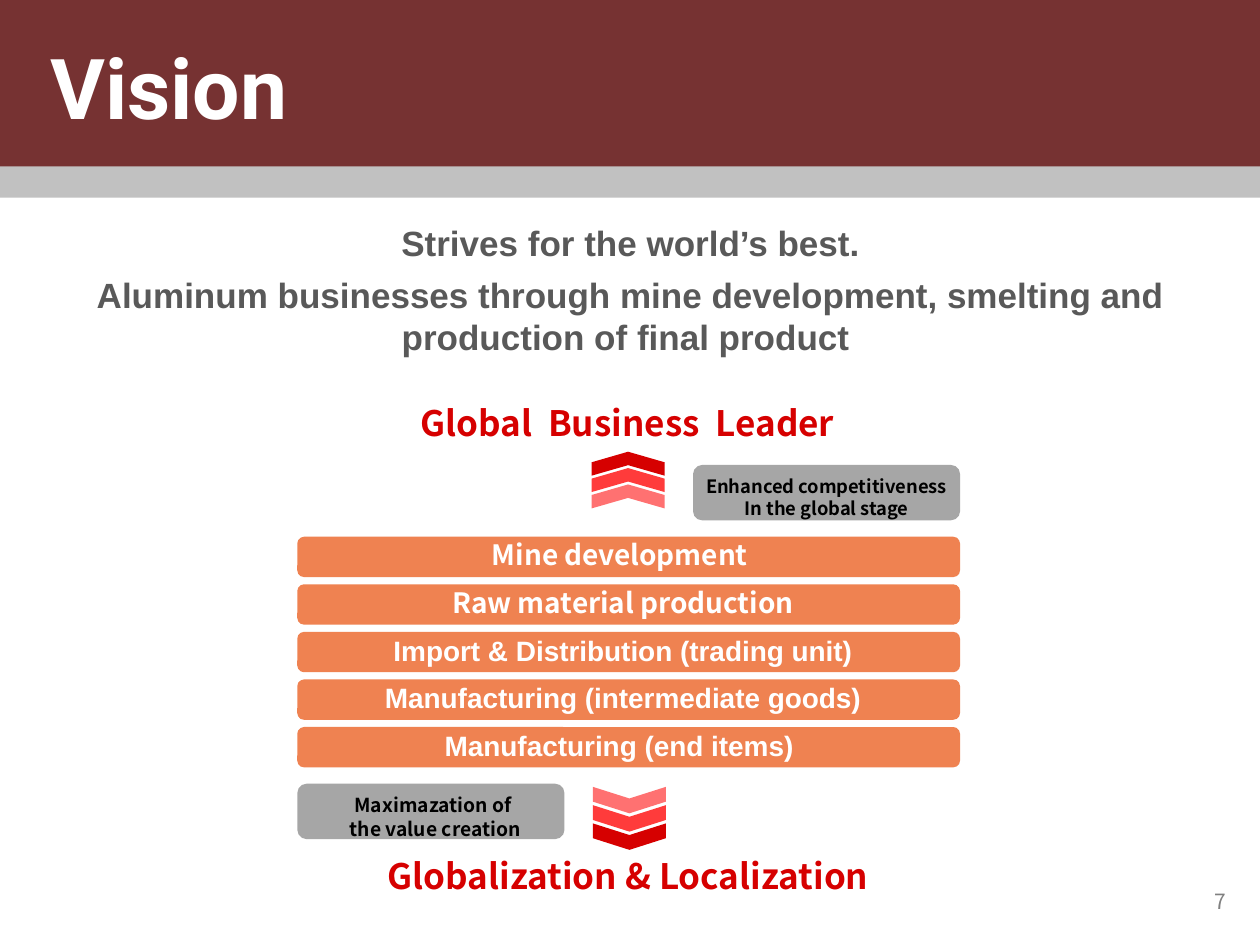
from dataclasses import dataclass
from pptx import Presentation
from pptx.dml.color import RGBColor
from pptx.enum.shapes import MSO_SHAPE
from pptx.enum.text import MSO_ANCHOR, MSO_AUTO_SIZE, PP_ALIGN
from pptx.util import Inches, Pt


@dataclass(frozen=True)
class Theme:
    maroon: str = "763232"
    silver: str = "C1C1C1"
    gray: str = "A6A6A6"
    orange: str = "EF8251"
    white: str = "FFFFFF"
    black: str = "000000"
    text: str = "595959"
    number: str = "808080"
    reds: tuple = ("D60000", "FF3B3B", "FF7171")
    title_font: str = "Roboto"
    body_font: str = "Arial"
    label_font: str = "Noto Sans CJK KR"
    title_size: float = 48
    heading_size: float = 20
    bar_size: float = 16
    number_size: float = 12


THEME = Theme()


def add_block(s, kind, box, color, rotation=0):
    sp = s.shapes.add_shape(kind, *map(Inches, box))
    sp.shadow.inherit = False
    sp.fill.solid()
    sp.fill.fore_color.rgb = RGBColor.from_string(color)
    sp.line.fill.background()
    sp.rotation = rotation
    return sp


def write_line(p, text, font, size, color, align, bold=True):
    p.alignment = align
    r = p.add_run()
    r.text = text
    r.font.name = font
    r.font.size = Pt(size)
    r.font.bold = bold
    r.font.color.rgb = RGBColor.from_string(color)


def add_label(s, box, lines, font, size, color, align=PP_ALIGN.CENTER, bold=True):
    tf = s.shapes.add_textbox(*map(Inches, box)).text_frame
    tf.word_wrap = True
    for i, text in enumerate(lines):
        p = tf.add_paragraph() if i else tf.paragraphs[0]
        write_line(p, text, font, size, color, align, bold)
    return tf


def add_header(s, text):
    add_block(s, MSO_SHAPE.RECTANGLE, (0, 0, 10, 1.57), THEME.silver)
    add_block(s, MSO_SHAPE.RECTANGLE, (0, 0, 10, 1.32), THEME.maroon)
    title = s.shapes.title
    s.shapes._spTree.append(title._element)
    title.left, title.top, title.width, title.height = map(Inches, (0.3, 0.32, 5.6, 0.83))
    tf = title.text_frame
    tf.auto_size = MSO_AUTO_SIZE.NONE
    tf.vertical_anchor = MSO_ANCHOR.TOP
    p = tf.paragraphs[0]
    p.line_spacing = 0.9
    write_line(p, text, THEME.title_font, THEME.title_size, THEME.white, PP_ALIGN.LEFT)


def add_bars(s, bars):
    for i, (text, font) in enumerate(bars):
        top = 4.26 + 0.3775 * i
        add_block(s, MSO_SHAPE.ROUNDED_RECTANGLE, (2.36, top, 5.26, 0.32), THEME.orange)
        add_label(s, (2.5, top - 0.04, 4.89, 0.37), [text], font, THEME.bar_size, THEME.white)


def add_callout(s, left, top, text_box, lines, size):
    add_block(s, MSO_SHAPE.ROUNDED_RECTANGLE, (left, top, 2.12, 0.44), THEME.gray)
    add_label(s, text_box, lines, THEME.label_font, size, THEME.black)


def add_chevrons(s, top, step, depth, colors, rotation):
    for i, color in enumerate(colors):
        box = (4.89, top + step * i, depth, 0.58)
        sp = add_block(s, MSO_SHAPE.CHEVRON, box, color, rotation)
        sp.adjustments[0] = 0.44


def main():
    prs = Presentation()
    prs.slide_width, prs.slide_height = Inches(10), Inches(7.5)
    s = prs.slides.add_slide(prs.slide_layouts[5])
    add_header(s, "Vision")

    number = add_label(s, (9.12, 6.95, 0.71, 0.4), ["7"], THEME.label_font,
                       THEME.number_size, THEME.number, PP_ALIGN.RIGHT, False)
    number.vertical_anchor = MSO_ANCHOR.MIDDLE

    statements = (
        ((2.79, 1.71, 4.43, 0.44), "Strives for the world’s best."),
        ((0.6, 2.12, 8.81, 0.77), "Aluminum businesses through mine development, "
                                  "smelting and production of final product "),
    )
    for box, text in statements:
        add_label(s, box, [text], THEME.body_font, THEME.heading_size, THEME.text)

    add_bars(s, (
        ("Mine development ", THEME.label_font),
        ("Raw material production", THEME.label_font),
        ("Import & Distribution (trading unit)", THEME.body_font),
        ("Manufacturing (intermediate goods)", THEME.body_font),
        ("Manufacturing (end items) ", THEME.body_font),
    ))

    add_callout(s, 5.5, 3.69, (5.5, 3.72, 2.12, 0.45),
                ("Enhanced competitiveness", "In the global stage"), 10.5)
    add_callout(s, 2.36, 6.22, (2.43, 6.25, 2.05, 0.47),
                ("Maximazation of ", "the value creation"), 11)

    add_chevrons(s, 3.39, 0.13, 0.19, THEME.reds, 270)
    add_chevrons(s, 6.06, 0.145, 0.21, THEME.reds[::-1], 90)

    goals = (
        ((3.01, 3.14, 3.94, 0.44), "Global  Business  Leader"),
        ((2.65, 6.73, 4.67, 0.44), "Globalization & Localization"),
    )
    for box, text in goals:
        add_label(s, box, [text], THEME.label_font, THEME.heading_size, THEME.reds[0])

    prs.save("out.pptx")


if __name__ == "__main__":
    main()
